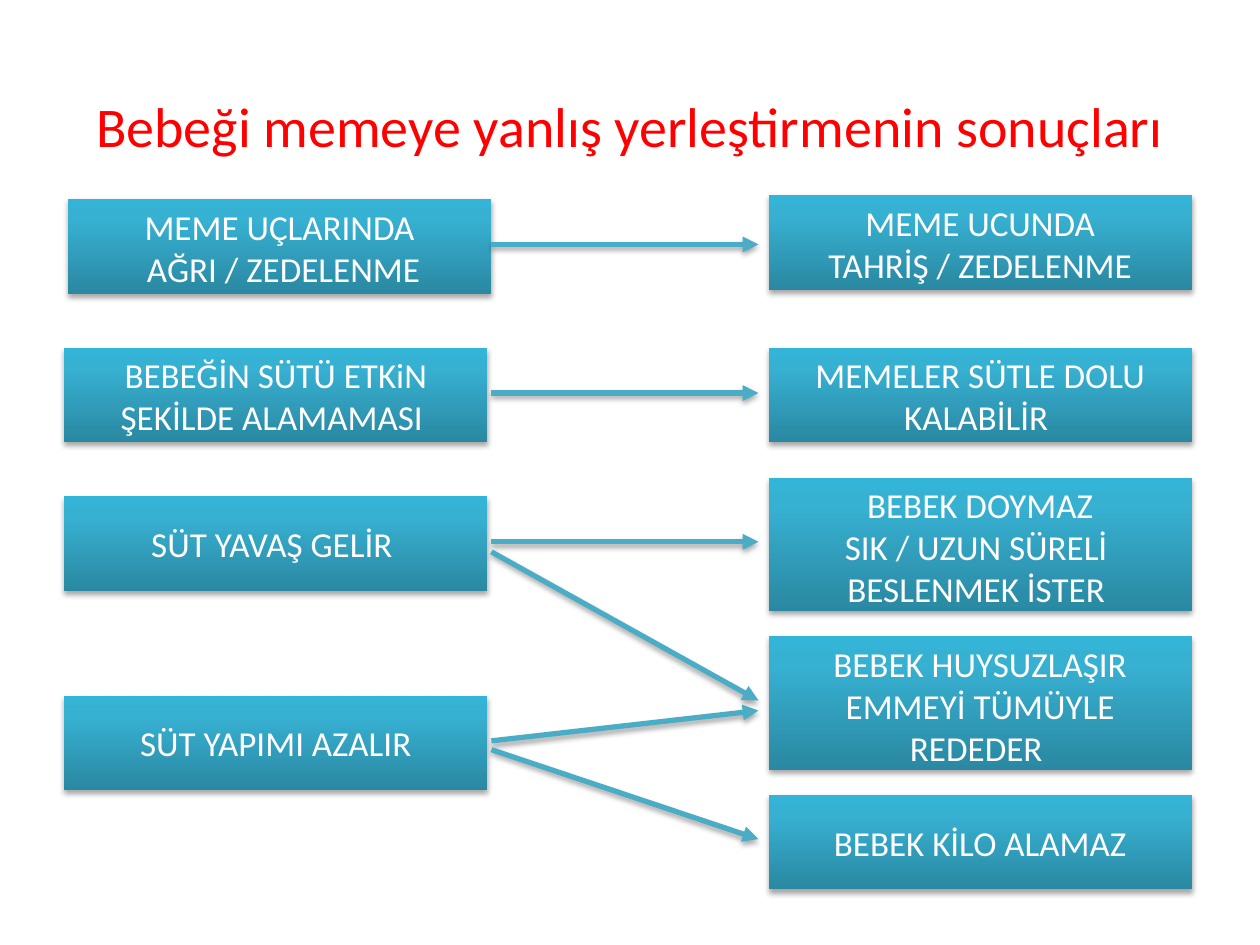
import copy

import pptx
import pptx.dml.color
import pptx.enum.shapes
import pptx.enum.text
import pptx.oxml
import pptx.oxml.ns
import pptx.util
from pptx.util import Inches

RED = pptx.dml.color.RGBColor(0xFF, 0x00, 0x00)
WHITE = pptx.dml.color.RGBColor(0xFF, 0xFF, 0xFF)
ARROW_BLUE = pptx.dml.color.RGBColor(0x4B, 0xAC, 0xC6)
GRADIENT = [
    (0, pptx.dml.color.RGBColor(0x2A, 0x88, 0xA2)),
    (0.8, pptx.dml.color.RGBColor(0x37, 0xB1, 0xD2)),
    (1, pptx.dml.color.RGBColor(0x34, 0xB4, 0xD6)),
]
FONT = "Calibri"
BOX_WIDTH, LOW, TALL = 3.36, 0.75, 1.06
CAUSE_LEFT, RESULT_LEFT = 0.51, 6.1
ARROW_START, ARROW_END = 3.9, 6.02

CAUSES = [
    (0.54, 1.58, LOW, ["MEME UÇLARINDA", " AĞRI / ZEDELENME"]),
    (CAUSE_LEFT, 2.76, LOW, ["BEBEĞİN SÜTÜ ETKiN ŞEKİLDE ALAMAMASI "]),
    (CAUSE_LEFT, 3.94, LOW, ["SÜT YAVAŞ GELİR "]),
    (CAUSE_LEFT, 5.52, LOW, [" SÜT YAPIMI AZALIR "]),
]
RESULTS = [
    (RESULT_LEFT, 1.55, LOW, ["MEME UCUNDA", "TAHRİŞ / ZEDELENME"]),
    (RESULT_LEFT, 2.76, LOW, ["MEMELER SÜTLE DOLU KALABİLİR "]),
    (RESULT_LEFT, 3.79, TALL, ["BEBEK DOYMAZ", "SIK / UZUN SÜRELİ \vBESLENMEK İSTER "]),
    (RESULT_LEFT, 5.05, TALL, ["BEBEK HUYSUZLAŞIR", "EMMEYİ TÜMÜYLE REDEDER "]),
    (RESULT_LEFT, 6.31, LOW, [" BEBEK KİLO ALAMAZ "]),
]
SINGLE_LINES = {"SÜT YAVAŞ GELİR", "SÜT YAPIMI AZALIR", "BEBEK KİLO ALAMAZ"}
ARROWS = [(1.94, 1.94), (3.12, 3.12), (4.3, 4.3), (4.38, 5.56), (5.88, 5.64), (5.95, 6.66)]


def add_shadow(shape):
    """Give a shape or connector a soft shadow that falls straight down."""
    shape._element.spPr.append(pptx.oxml.parse_xml(
        f'<a:effectLst {pptx.oxml.ns.nsdecls("a")}>'
        '<a:outerShdw blurRad="40000" dist="23000" dir="5400000" rotWithShape="0">'
        '<a:srgbClr val="000000"><a:alpha val="35000"/></a:srgbClr>'
        '</a:outerShdw></a:effectLst>'))


def format_paragraph(paragraph, size, color):
    """Centre a paragraph and set its font."""
    paragraph.alignment = pptx.enum.text.PP_ALIGN.CENTER
    paragraph.font.name = FONT
    paragraph.font.size = pptx.util.Pt(size)
    paragraph.font.color.rgb = color


def fill_gradient(shape):
    """Fill a shape with the vertical three-stop blue gradient."""
    shape.fill.gradient()
    shape.fill.gradient_angle = 90
    stop_list = shape._element.spPr.find(".//" + pptx.oxml.ns.qn("a:gsLst"))
    stop_list.append(copy.deepcopy(stop_list[-1]))
    for stop, (position, color) in zip(shape.fill.gradient_stops, GRADIENT):
        stop.position = position
        stop.color.rgb = color


def add_box(slide, left, top, height, texts):
    """Draw one labelled box of the diagram."""
    shape = slide.shapes.add_shape(
        pptx.enum.shapes.MSO_SHAPE.RECTANGLE,
        Inches(left), Inches(top), Inches(BOX_WIDTH), Inches(height))
    fill_gradient(shape)
    shape.line.fill.background()
    add_shadow(shape)
    frame = shape.text_frame
    frame.word_wrap = True
    anchor = pptx.enum.text.MSO_ANCHOR
    frame.vertical_anchor = anchor.MIDDLE if texts[0].strip() in SINGLE_LINES else anchor.TOP
    frame.text = "\n".join(texts)
    for paragraph in frame.paragraphs:
        format_paragraph(paragraph, 20, WHITE)


def add_arrow(slide, start_top, end_top):
    """Draw an arrow from the cause column to the result column."""
    connector = slide.shapes.add_connector(
        pptx.enum.shapes.MSO_CONNECTOR.STRAIGHT,
        Inches(ARROW_START), Inches(start_top), Inches(ARROW_END), Inches(end_top))
    connector.line.color.rgb = ARROW_BLUE
    connector.line.width = pptx.util.Pt(3)
    connector.line._get_or_add_ln().append(pptx.oxml.parse_xml(
        f'<a:tailEnd {pptx.oxml.ns.nsdecls("a")} type="triangle"/>'))
    add_shadow(connector)


def set_title(slide, left, top, width, height):
    """Place and format the slide title."""
    title = slide.shapes.title
    title.left, title.top = Inches(left), Inches(top)
    title.width, title.height = Inches(width), Inches(height)
    frame = title.text_frame
    frame.text = "Bebeği memeye yanlış yerleştirmenin sonuçları"
    frame.word_wrap = True
    frame.auto_size = pptx.enum.text.MSO_AUTO_SIZE.NONE
    frame.vertical_anchor = pptx.enum.text.MSO_ANCHOR.TOP
    format_paragraph(frame.paragraphs[0], 32, RED)


def main():
    """Build and save the slide."""
    presentation = pptx.Presentation()
    presentation.slide_width, presentation.slide_height = Inches(10), Inches(7.5)
    slide = presentation.slides.add_slide(presentation.slide_layouts[5])
    set_title(slide, 0.51, 0.68, 8.98, 0.64)
    for box in CAUSES + RESULTS:
        add_box(slide, *box)
    for arrow in ARROWS:
        add_arrow(slide, *arrow)
    presentation.save("out.pptx")


if __name__ == "__main__":
    main()
